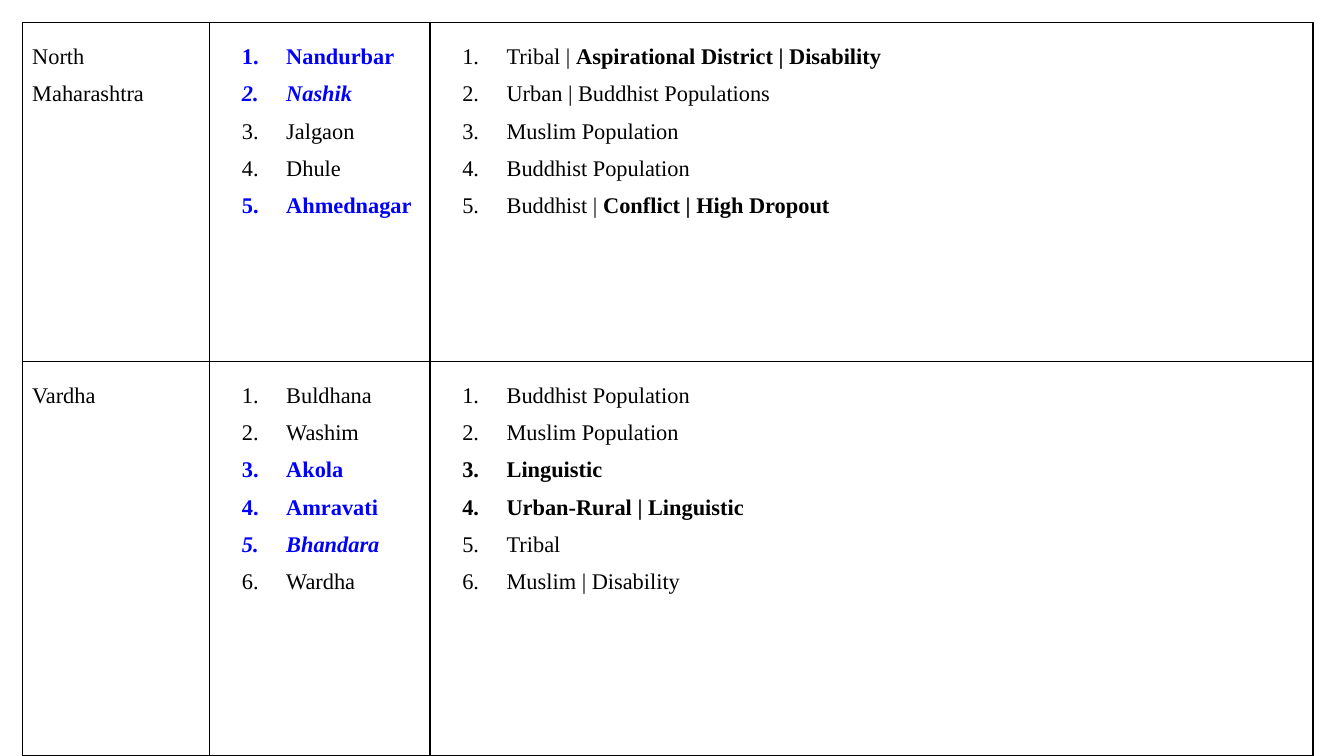
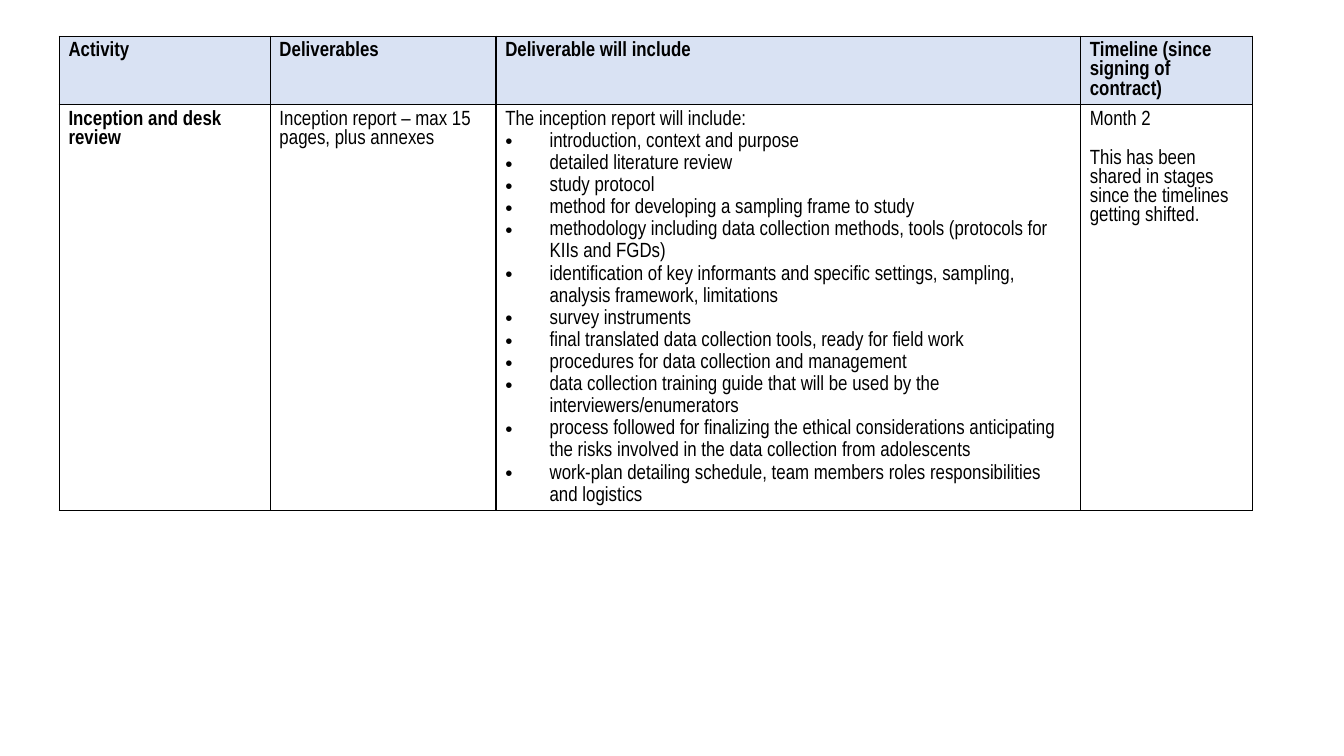
import dataclasses

import lxml.etree
import pptx
import pptx.dml.color
import pptx.enum.text
import pptx.oxml.ns
import pptx.util

Inches = pptx.util.Inches
Pt = pptx.util.Pt
Align = pptx.enum.text.PP_ALIGN


@dataclasses.dataclass(frozen=True)
class Theme:
    black: str = "000000"
    blue: str = "0000FF"
    header_fill: str = "D9E2F3"
    serif: str = "Times New Roman"
    narrow: str = "Arial Narrow"
    serif_size: int = 12
    narrow_size: int = 11
    border: float = 0.75


@dataclasses.dataclass(frozen=True)
class TableStyle:
    font: str
    size: int
    margin_y: float
    list_indent: float
    list_spacing: float
    text_spacing: float
    align: Align
    numbered: bool


@dataclasses.dataclass(frozen=True)
class Line:
    text: str
    bold: str = ""
    focus: bool = False
    italic: bool = False
    listed: bool = False
    space_before: float = 0


def plain(text, space_before=0):
    return Line(text, space_before=space_before)


def strong(text):
    return Line("", text)


def item(text="", bold=""):
    return Line(text, bold, listed=True)


def focus(text, italic=False):
    return Line("", text, focus=True, italic=italic, listed=True)


def add_xml(parent, tag, **attributes):
    return lxml.etree.SubElement(parent, pptx.oxml.ns.qn(tag), attributes)


class Builder:
    hanging = 0.33
    margin_x = 0.07

    def __init__(self, theme):
        self.theme = theme
        self.deck = pptx.Presentation()
        self.deck.slide_width = Inches(10)
        self.deck.slide_height = Inches(10) * 9 // 16
        self.page = None

    def new_page(self):
        self.page = self.deck.slides.add_slide(self.deck.slide_layouts[6])

    def table(self, left, top, widths, heights, rows, style, header=False):
        frame = self.page.shapes.add_table(
            len(rows), len(widths), Inches(left), Inches(top),
            Inches(sum(widths)), Inches(sum(heights)))
        table = frame.table
        table.first_row = False
        table.horz_banding = False
        for column, width in zip(table.columns, widths):
            column.width = Inches(width)
        for row, height in zip(table.rows, heights):
            row.height = Inches(height)
        for row_index, row in enumerate(rows):
            for column_index, lines in enumerate(row):
                cell = table.cell(row_index, column_index)
                self.cell(cell, lines, style, header and row_index == 0)

    def cell(self, cell, lines, style, shaded):
        cell.margin_left = cell.margin_right = Inches(self.margin_x)
        cell.margin_top = cell.margin_bottom = Inches(style.margin_y)
        self.borders(cell)
        if shaded:
            cell.fill.solid()
            cell.fill.fore_color.rgb = self.color(self.theme.header_fill)
        else:
            cell.fill.background()
        for index, line in enumerate(lines):
            frame = cell.text_frame
            para = frame.add_paragraph() if index else frame.paragraphs[0]
            self.paragraph(para, line, style)

    def borders(self, cell):
        properties = cell._tc.get_or_add_tcPr()
        for side in ("a:lnL", "a:lnR", "a:lnT", "a:lnB"):
            edge = add_xml(properties, side, w=str(Pt(self.theme.border)))
            fill = add_xml(edge, "a:solidFill")
            add_xml(fill, "a:srgbClr", val=self.theme.black)

    def paragraph(self, para, line, style):
        color = self.theme.blue if line.focus else self.theme.black
        if line.listed:
            self.bullet(para, color, style)
        para.alignment = style.align
        para.line_spacing = style.list_spacing if line.listed else style.text_spacing
        if line.space_before:
            para.space_before = Pt(line.space_before)
        for text, bold in ((line.text, False), (line.bold, True)):
            if text:
                span = para.add_run()
                span.text = text
                span.font.name = style.font
                span.font.size = Pt(style.size)
                span.font.bold = bold
                span.font.italic = line.italic
                span.font.color.rgb = self.color(color)

    def bullet(self, para, color, style):
        properties = para._p.get_or_add_pPr()
        properties.set("marL", str(Inches(style.list_indent)))
        properties.set("indent", str(-Inches(self.hanging)))
        add_xml(add_xml(properties, "a:buClr"), "a:srgbClr", val=color)
        if style.numbered:
            add_xml(properties, "a:buFont", typeface=style.font)
            add_xml(properties, "a:buAutoNum", type="arabicPeriod")
        else:
            add_xml(properties, "a:buFont", typeface="Arial")
            add_xml(properties, "a:buChar", char="•")

    @staticmethod
    def color(value):
        return pptx.dml.color.RGBColor.from_string(value)


def district_page(builder):
    theme = builder.theme
    style = TableStyle(theme.serif, theme.serif_size, 0.07, 0.5, 1.5, 1.5,
                       Align.JUSTIFY, True)
    north = [
        [plain("North Maharashtra")],
        [focus("Nandurbar"), focus("Nashik", italic=True), item("Jalgaon"),
         item("Dhule"), focus("Ahmednagar")],
        [item("Tribal | ", "Aspirational District | Disability"),
         item("Urban | Buddhist Populations"),
         item("Muslim Population"),
         item("Buddhist Population"),
         item("Buddhist | ", "Conflict | High Dropout")],
    ]
    vardha = [
        [plain("Vardha")],
        [item("Buldhana"), item("Washim"), focus("Akola"), focus("Amravati"),
         focus("Bhandara", italic=True), item("Wardha")],
        [item("Buddhist Population"),
         item("Muslim Population"),
         item(bold="Linguistic"),
         item(bold="Urban-Rural | Linguistic"),
         item("Tribal"),
         item("Muslim | Disability")],
    ]
    builder.new_page()
    builder.table(0.17, 0.17, [1.39, 1.64, 6.57], [2.52, 2.93],
                  [north, vardha], style)


def deliverables_page(builder):
    theme = builder.theme
    style = TableStyle(theme.narrow, theme.narrow_size, 0.04, 0.33, 1.15, 1,
                       Align.LEFT, False)
    headings = ["Activity", "Deliverables", "Deliverable will include",
                "Timeline (since signing of contract)"]
    contents = [
        "introduction, context and purpose",
        "detailed literature review",
        "study protocol",
        "method for developing a sampling frame to study",
        "methodology including data collection methods, tools (protocols for KIIs and FGDs)",
        "identification of key informants and specific settings, sampling, "
        "analysis framework, limitations",
        "survey instruments",
        "final translated data collection tools, ready for field work",
        "procedures for data collection and management",
        "data collection training guide that will be used by the interviewers/enumerators",
        "process followed for finalizing the ethical considerations anticipating "
        "the risks involved in the data collection from adolescents",
        "work-plan detailing schedule, team members roles responsibilities and logistics",
    ]
    inception = [
        [strong("Inception and desk review")],
        [plain("Inception report – max 15 pages, plus annexes")],
        [plain("The inception report will include:")] + [item(text) for text in contents],
        [plain("Month 2"),
         plain("This has been shared in stages since the timelines getting shifted.",
               space_before=10.5)],
    ]
    builder.new_page()
    builder.table(0.44, 0.27, [1.57, 1.68, 4.35, 1.28], [0.51, 3.02],
                  [[[strong(text)] for text in headings], inception],
                  style, header=True)


def main():
    builder = Builder(Theme())
    district_page(builder)
    deliverables_page(builder)
    builder.deck.save("out.pptx")


if __name__ == "__main__":
    main()
